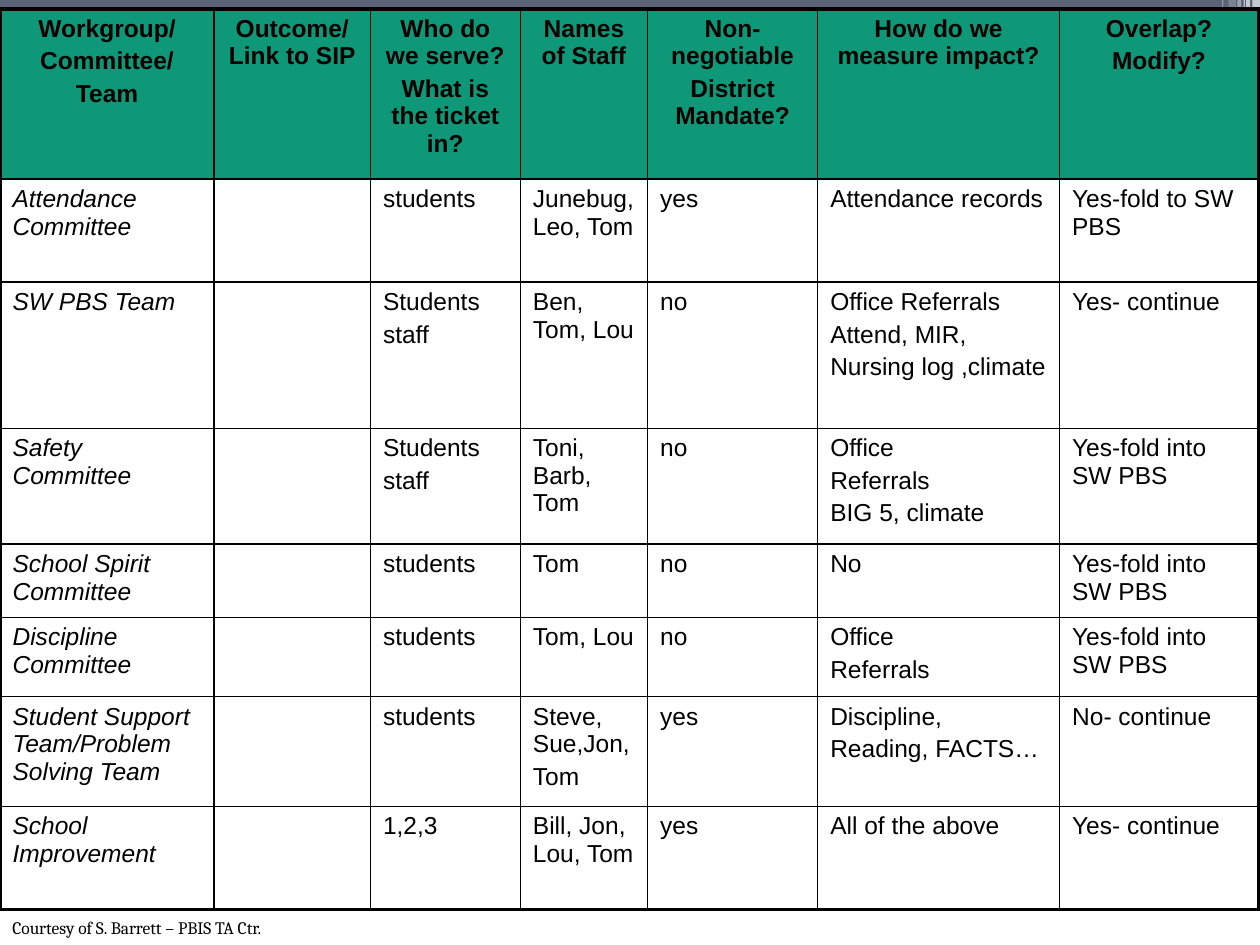
from dataclasses import dataclass

from lxml.etree import SubElement
from pptx import Presentation
from pptx.dml.color import RGBColor
from pptx.enum.shapes import MSO_SHAPE
from pptx.enum.text import MSO_AUTO_SIZE, PP_ALIGN
from pptx.oxml.ns import qn
from pptx.util import Inches, Pt


@dataclass(frozen=True)
class Theme:
    ink: str = "000000"
    paper: str = "FFFFFF"
    slate: str = "5A6378"
    header: str = "0E9878"
    table_font: str = "Arial"
    credit_font: str = "Cambria"
    table_size: float = 14
    credit_size: float = 10
    paragraph_gap: float = 2.8
    inner_line: float = 1
    outer_line: float = 2.25


THEME = Theme()

COLUMN_WIDTHS = [1.7, 1.24, 1.19, 1.01, 1.35, 1.92, 1.58]
ROW_HEIGHTS = [1.35, 0.82, 1.16, 0.92, 0.58, 0.63, 0.87, 0.82]

# Each line break inside a cell starts a new paragraph
ROWS = [
    ["Workgroup/\nCommittee/\nTeam", "Outcome/Link to SIP",
     "Who do we serve?\nWhat is the ticket in?", "Names of Staff",
     "Non-negotiable\nDistrict Mandate?", "How do we measure impact?",
     "Overlap?\nModify?"],
    ["Attendance Committee", "", "students", "Junebug, Leo, Tom", "yes",
     "Attendance records", "Yes-fold to SW PBS"],
    ["SW PBS Team", "", "Students\nstaff", "Ben, Tom, Lou", "no",
     "Office Referrals\nAttend, MIR,\nNursing log ,climate", "Yes- continue"],
    ["Safety Committee", "", "Students\nstaff", "Toni, Barb, Tom", "no",
     "Office\nReferrals\nBIG 5, climate", "Yes-fold into SW PBS"],
    ["School Spirit Committee", "", "students", "Tom", "no", "No",
     "Yes-fold into SW PBS"],
    ["Discipline Committee", "", "students", "Tom, Lou", "no",
     "Office\nReferrals", "Yes-fold into SW PBS"],
    ["Student Support Team/Problem Solving Team", "", "students",
     "Steve, Sue,Jon,\nTom", "yes", "Discipline,\nReading, FACTS…",
     "No- continue"],
    ["School Improvement", "", "1,2,3", "Bill, Jon, Lou, Tom", "yes",
     "All of the above", "Yes- continue"],
]

# Pinstripes: distance from the right edge, width, height, opacity in percent
PINSTRIPES = [
    (0.06, 0.06, 0.68, 65),
    (0.11, 0.03, 0.68, 65),
    (0.13, 0.01, 0.68, 60),
    (0.18, 0.03, 0.68, 40),
    (0.25, 0.06, 0.64, 20),
    (0.3, 0.01, 0.64, 30),
]


def style_span(span, font, size, bold=False, italic=False):
    span.font.name = font
    span.font.size = Pt(size)
    span.font.bold = bold
    span.font.italic = italic
    span.font.color.rgb = RGBColor.from_string(THEME.ink)


def add_bar(page, left, top, width, height, color, opacity=100):
    bar = page.shapes.add_shape(MSO_SHAPE.RECTANGLE, Inches(left), Inches(top),
                                Inches(width), Inches(height))
    bar.shadow.inherit = False
    bar.line.fill.background()
    bar.fill.solid()
    bar.fill.fore_color.rgb = RGBColor.from_string(color)
    if opacity < 100:
        tone = bar.fill._xPr.find(f".//{qn('a:srgbClr')}")
        SubElement(tone, qn("a:alpha"), val=str(opacity * 1000))


def add_top_band(page, left, top, width, height):
    add_bar(page, left, top, width, height, THEME.slate)
    for offset, stripe_width, stripe_height, opacity in PINSTRIPES:
        add_bar(page, left + width - offset, top, stripe_width, stripe_height,
                THEME.paper, opacity)


def set_borders(cell, outer_sides):
    properties = cell._tc.get_or_add_tcPr()
    for side in "LRTB":
        weight = THEME.outer_line if side in outer_sides else THEME.inner_line
        line = SubElement(properties, qn(f"a:ln{side}"), w=str(Pt(weight)))
        fill = SubElement(line, qn("a:solidFill"))
        SubElement(fill, qn("a:srgbClr"), val=THEME.ink)


def fill_cell(cell, text, is_header, is_name):
    if is_header:
        cell.fill.solid()
        cell.fill.fore_color.rgb = RGBColor.from_string(THEME.header)
    else:
        cell.fill.background()
    cell.text_frame.text = text
    for para in cell.text_frame.paragraphs:
        para.alignment = PP_ALIGN.CENTER if is_header else PP_ALIGN.LEFT
        para.space_before = Pt(THEME.paragraph_gap)
        for span in para.runs:
            style_span(span, THEME.table_font, THEME.table_size,
                       bold=is_header, italic=is_name and not is_header)


def add_workgroup_table(page, left, top, width, height):
    table = page.shapes.add_table(len(ROWS), len(COLUMN_WIDTHS), Inches(left),
                                  Inches(top), Inches(width),
                                  Inches(height)).table
    table.first_row = False
    table.horz_banding = False
    for column, column_width in zip(table.columns, COLUMN_WIDTHS):
        column.width = Inches(column_width)
    for row, row_height in zip(table.rows, ROW_HEIGHTS):
        row.height = Inches(row_height)

    last_row, last_column = len(ROWS) - 1, len(COLUMN_WIDTHS) - 1
    for r, texts in enumerate(ROWS):
        for c, text in enumerate(texts):
            cell = table.cell(r, c)
            edges = {"T": r == 0, "B": r == last_row,
                     "L": c == 0, "R": c == last_column}
            set_borders(cell, [side for side, outer in edges.items() if outer])
            fill_cell(cell, text, is_header=r == 0, is_name=c == 0)


def add_credit(page, left, top, width, height):
    box = page.shapes.add_textbox(Inches(left), Inches(top), Inches(width),
                                  Inches(height))
    frame = box.text_frame
    frame.word_wrap = True
    frame.auto_size = MSO_AUTO_SIZE.SHAPE_TO_FIT_TEXT
    frame.text = "Courtesy of S. Barrett – PBIS TA Ctr."
    style_span(frame.paragraphs[0].runs[0], THEME.credit_font,
               THEME.credit_size)


def main():
    deck = Presentation()
    deck.slide_width, deck.slide_height = Inches(10), Inches(7.5)
    page = deck.slides.add_slide(deck.slide_layouts[6])
    page.background.fill.solid()
    page.background.fill.fore_color.rgb = RGBColor.from_string(THEME.paper)

    add_top_band(page, 0, 0, 10, 0.34)
    add_workgroup_table(page, 0, 0.07, sum(COLUMN_WIDTHS), sum(ROW_HEIGHTS))
    add_credit(page, 0, 7.23, 3.5, 0.27)

    deck.save("out.pptx")


if __name__ == "__main__":
    main()
